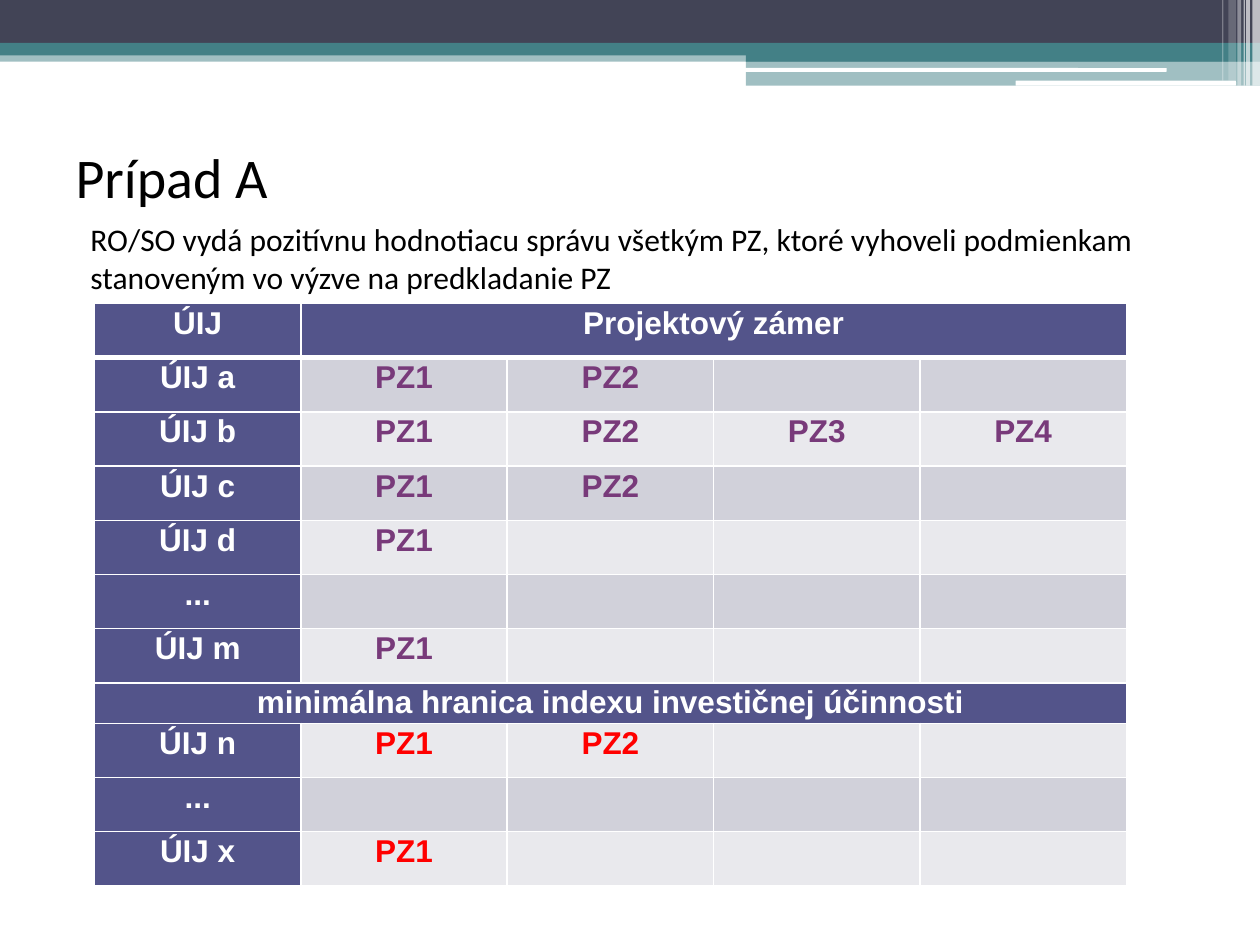
from collections import namedtuple

from lxml import etree
from pptx import Presentation
from pptx.dml.color import RGBColor
from pptx.enum.shapes import MSO_SHAPE
from pptx.enum.text import MSO_ANCHOR, MSO_AUTO_SIZE, PP_ALIGN
from pptx.oxml.ns import qn
from pptx.util import Inches, Pt

RECTANGLE = MSO_SHAPE.RECTANGLE
ROUNDED = MSO_SHAPE.ROUNDED_RECTANGLE
MIDDLE, TOP = MSO_ANCHOR.MIDDLE, MSO_ANCHOR.TOP
NO_FIT = MSO_AUTO_SIZE.NONE
LEFT, CENTER = PP_ALIGN.LEFT, PP_ALIGN.CENTER

WHITE = RGBColor(0xFF, 0xFF, 0xFF)
BLACK = RGBColor(0x00, 0x00, 0x00)
SLATE = RGBColor(0x42, 0x44, 0x56)
TEAL = RGBColor(0x43, 0x80, 0x86)
INDIGO = RGBColor(0x53, 0x54, 0x8A)
PURPLE = RGBColor(0x78, 0x3A, 0x7A)
RED = RGBColor(0xFF, 0x00, 0x00)
DARK_BAND = RGBColor(0xD1, 0xD1, 0xDA)
LIGHT_BAND = RGBColor(0xE9, 0xE9, 0xED)

SLIDE_WIDTH, SLIDE_HEIGHT = Inches(10), Inches(7.5)
COLUMN, ROW = SLIDE_WIDTH / 100, SLIDE_HEIGHT / 75
Box = namedtuple("Box", "left top width height")

BAND_BOX = Box(0, 0, 100, 6.8)
TITLE_BOX = Box(5, 12.5, 90, 3)
BODY_BOX = Box(5, 17, 90, 54.9)
TABLE_BOX = Box(7.5, 24.1, 81.9, 45.9)

BAND_PARTS = [
    (RECTANGLE, Box(0, 4, 100, 0.9), TEAL, 50),
    (RECTANGLE, Box(0, 0, 100, 3.4), SLATE, 100),
    (RECTANGLE, Box(0, 3.4, 100, 1), TEAL, 100),
    (RECTANGLE, Box(59.2, 3.9, 40.8, 1), TEAL, 100),
    (RECTANGLE, Box(59.2, 4.8, 40.8, 2), TEAL, 50),
    (ROUNDED, Box(59.1, 5.4, 33.5, 0.3), WHITE, 100),
    (ROUNDED, Box(80.6, 6.4, 17.5, 0.4), WHITE, 100),
]
STRIPES = [
    (99.4, 0.6, 6.8, 65), (98.9, 0.3, 6.8, 65), (98.7, 0.1, 6.8, 60),
    (98.2, 0.3, 6.8, 40), (97.5, 0.6, 6.4, 20), (97, 0.1, 6.4, 30),
]

HEADINGS = ("ÚIJ", "Projektový zámer")
ABOVE_LIMIT = [("ÚIJ a", 2), ("ÚIJ b", 4), ("ÚIJ c", 2), ("ÚIJ d", 1), ("...", 0), ("ÚIJ m", 1)]
LIMIT = "minimálna hranica indexu investičnej účinnosti"
BELOW_LIMIT = [("ÚIJ n", 2), ("...", 0), ("ÚIJ x", 1)]
COLUMN_COUNT = 5
ROW_HEIGHT, LIMIT_HEIGHT = 4.3, 2.9


def to_lengths(box):
    return (round(box.left * COLUMN), round(box.top * ROW),
            round(box.width * COLUMN), round(box.height * ROW))


def place(shape, box):
    shape.left, shape.top, shape.width, shape.height = to_lengths(box)


def write_text(frame, text, *, size=18, font="Calibri", color=BLACK, bold=False,
               align=LEFT, anchor=TOP, spacing=None, before=None):
    frame.word_wrap = True
    frame.vertical_anchor = anchor
    para = frame.paragraphs[0]
    para.alignment = align
    para.line_spacing = spacing
    para.space_before = before
    span = para.add_run()
    span.text = text
    span.font.size = Pt(size)
    span.font.name = font
    span.font.bold = bold
    span.font.color.rgb = color
    return para


def add_block(page, box, kind, part, color, opacity):
    offset = Box(box.left + part.left, box.top + part.top, part.width, part.height)
    shape = page.shapes.add_shape(kind, *to_lengths(offset))
    shape.shadow.inherit = False
    shape.line.fill.background()
    shape.fill.solid()
    shape.fill.fore_color.rgb = color
    if opacity < 100:
        paint = next(shape.element.spPr.iter(qn("a:srgbClr")))
        etree.SubElement(paint, qn("a:alpha"), val=str(opacity * 1000))


def add_band(page, box):
    for kind, part, color, opacity in BAND_PARTS:
        add_block(page, box, kind, part, color, opacity)
    for left, width, height, opacity in STRIPES:
        add_block(page, box, RECTANGLE, Box(left, 0, width, height), WHITE, opacity)


def add_title(page, box):
    title = page.shapes.title
    place(title, box)
    title.text_frame.auto_size = NO_FIT
    write_text(title.text_frame, "Prípad A", size=32, anchor=MIDDLE)


def add_body(page, box):
    body = page.shapes.add_textbox(*to_lengths(box))
    para = write_text(
        body.text_frame,
        "RO/SO vydá pozitívnu hodnotiacu správu všetkým PZ, ktoré vyhoveli "
        "podmienkam stanoveným vo výzve na predkladanie PZ", before=Pt(3))
    para._p.get_or_add_pPr().set("marL", str(Inches(0.12)))


def set_borders(cell, **widths):
    properties = cell._tc.get_or_add_tcPr()
    for position, side in enumerate(("lnL", "lnR", "lnT", "lnB")):
        line = etree.Element(qn("a:" + side), w=str(Pt(widths.get(side, 1))))
        fill = etree.SubElement(line, qn("a:solidFill"))
        etree.SubElement(fill, qn("a:srgbClr"), val=str(WHITE))
        properties.insert(position, line)


def fill_cell(cell, text, fill, color=WHITE):
    cell.margin_left = cell.margin_right = Inches(0.07)
    cell.margin_top = cell.margin_bottom = 0
    cell.fill.solid()
    cell.fill.fore_color.rgb = fill
    if text:
        write_text(cell.text_frame, text, font="Arial", color=color, bold=True,
                   align=CENTER, spacing=1.07)


def fill_project_rows(table, first, projects, color):
    for row, (unit, count) in enumerate(projects, first):
        fill_cell(table.cell(row, 0), unit, INDIGO)
        band = DARK_BAND if row % 2 else LIGHT_BAND
        for column in range(1, COLUMN_COUNT):
            text = f"PZ{column}" if column <= count else ""
            fill_cell(table.cell(row, column), text, band, color)


def add_project_table(page, box):
    limit_row = len(ABOVE_LIMIT) + 1
    row_count = limit_row + 1 + len(BELOW_LIMIT)
    table = page.shapes.add_table(row_count, COLUMN_COUNT, *to_lengths(box)).table
    for column in table.columns:
        column.width = round(box.width * COLUMN / COLUMN_COUNT)
    for number, row in enumerate(table.rows):
        row.height = round((LIMIT_HEIGHT if number == limit_row else ROW_HEIGHT) * ROW)
        for cell in row.cells:
            if number == 0:
                set_borders(cell, lnB=3)
            elif number == 1:
                set_borders(cell, lnT=3)
            else:
                set_borders(cell)

    for column in range(COLUMN_COUNT):
        fill_cell(table.cell(0, column), "".join(HEADINGS[column:column + 1]), INDIGO)
        fill_cell(table.cell(limit_row, column), "" if column else LIMIT, INDIGO)
    table.cell(0, 1).merge(table.cell(0, COLUMN_COUNT - 1))
    table.cell(limit_row, 0).merge(table.cell(limit_row, COLUMN_COUNT - 1))
    fill_project_rows(table, 1, ABOVE_LIMIT, PURPLE)
    fill_project_rows(table, limit_row + 1, BELOW_LIMIT, RED)


def main():
    deck = Presentation()
    deck.slide_width, deck.slide_height = SLIDE_WIDTH, SLIDE_HEIGHT
    page = deck.slides.add_slide(deck.slide_layouts[5])
    add_band(page, BAND_BOX)
    add_title(page, TITLE_BOX)
    add_body(page, BODY_BOX)
    add_project_table(page, TABLE_BOX)
    deck.save("out.pptx")


if __name__ == "__main__":
    main()
